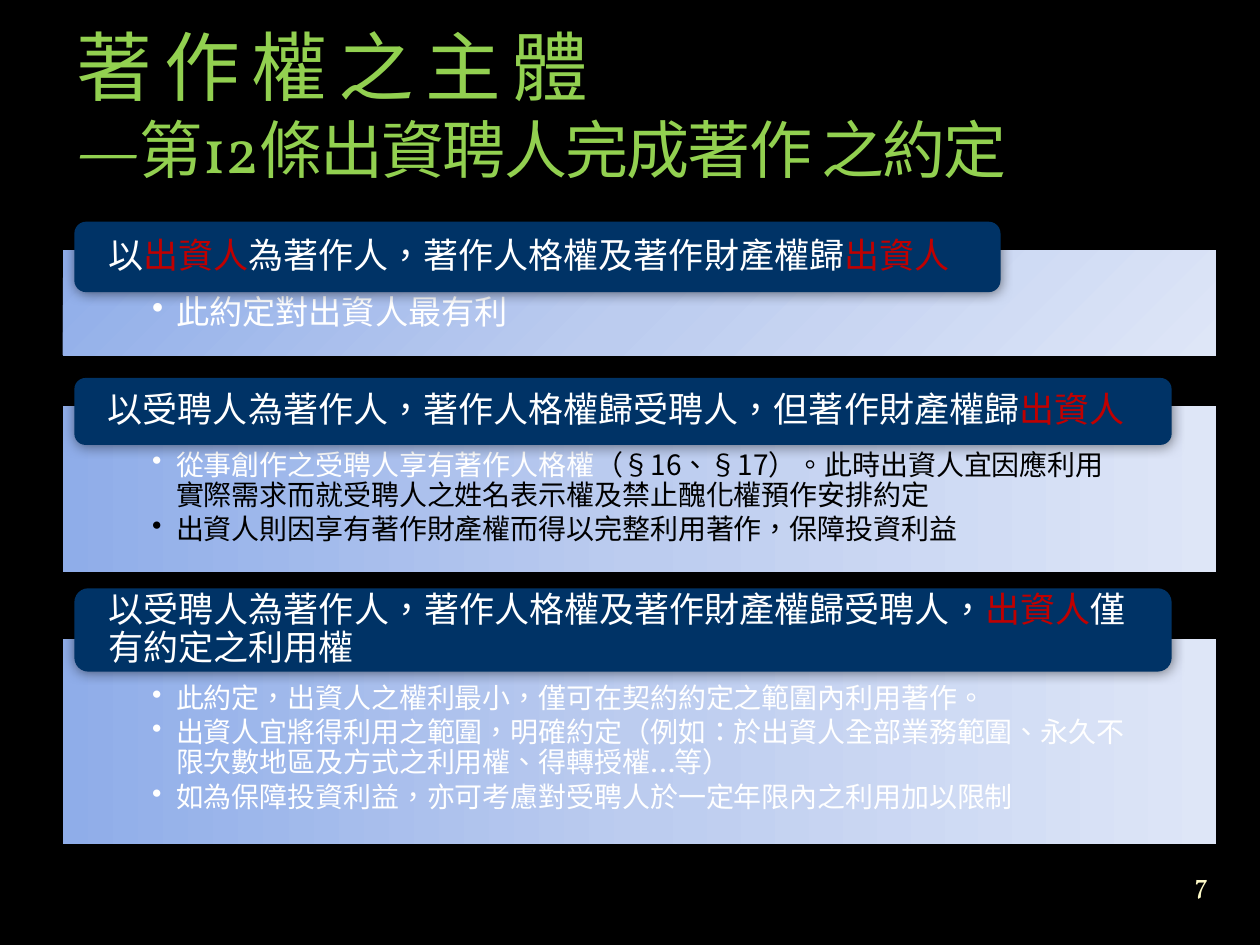
from copy import deepcopy

from lxml.etree import SubElement
from pptx import Presentation
from pptx.dml.color import RGBColor
from pptx.enum.shapes import MSO_SHAPE as Shape
from pptx.enum.text import MSO_ANCHOR as Anchor, MSO_AUTO_SIZE as AutoSize, PP_ALIGN as Align
from pptx.oxml.ns import qn
from pptx.util import Cm, Pt

# Content: a paragraph is a list of (text, colour) or (text, colour, font) runs
SERIF, SANS = "Vollkorn", "Noto Sans CJK SC"
WHITE, BLACK, RED = "FFFFFF", "000000", "C00000"
GREEN, NAVY, CREAM = "92D050", "003366", "FEFAC9"
GRADIENT = [(0, "8FADE9"), (0.5, "BCCCEF"), (1, "DEE6F7")]

TITLE_LINES = [("著 作 權 之 主 體", 43.2), ("—第12條出資聘人完成著作 之約定", 36)]

SECTIONS = [
    dict(
        heading=[("以", WHITE), ("出資人", RED),
                 ("為著作人，著作人格權及著作財產權歸", WHITE), ("出資人", RED)],
        bullets=[[("此約定對出資人最有利", WHITE)]],
        size=19, angle=315, panel=(5.05, 2.11), tab=(4.47, 18.67, 1.42),
    ),
    dict(
        heading=[("以受聘人為著作人，著作人格權歸受聘人，但著作財產權歸", WHITE), ("出資人", RED)],
        bullets=[
            [("從事創作之受聘人享有著作人格權", WHITE), ("（", BLACK),
             ("§16、§17）。此時出資人宜因應利用實際需求而就受聘人之姓名表示權及禁止醜化權預作安排約定",
              BLACK, SANS)],
            [("出資人則因享有著作財產權而得以完整利用著作，保障投資利益", BLACK, SANS)],
        ],
        size=16, angle=0, panel=(8.18, 3.35), tab=(7.62, 22.12, 1.35),
    ),
    dict(
        heading=[("以受聘人為著作人，著作人格權及著作財產權歸受聘人，", WHITE),
                 ("出資人", RED), ("僅有約定之利用權", WHITE)],
        bullets=[
            [("此約定，出資人之權利最小，僅可在契約約定之範圍內利用著作。", WHITE)],
            [("出資人宜將得利用之範圍，明確約定（例如：於出資人全部業務範圍、"
              "永久不限次數地區及方式之利用權、得轉授權…等）", WHITE)],
            [("如為保障投資利益，亦可考慮對受聘人於一定年限內之利用加以限制", WHITE)],
        ],
        size=16, angle=0, panel=(12.88, 4.14), tab=(11.86, 22.12, 1.68),
    ),
]
PANEL_LEFT, PANEL_WIDTH, TAB_LEFT = 1.27, 23.24, 1.5


def rgb(colour):
    return RGBColor.from_string(colour)


def add_run(paragraph, text, colour, font=SERIF, size=16, spacing=None):
    run = paragraph.add_run()
    run.text = text
    run.font.size = Pt(size)
    run.font.name = font
    run.font.bold = False
    run.font.color.rgb = rgb(colour)
    properties = run.font._element
    properties.set("lang", "zh-TW")
    if spacing is not None:
        properties.set("spc", str(spacing))
    SubElement(properties, qn("a:ea")).set("typeface", font)


def write(shape, paragraphs, size=16, insets=(0, 0, 0, 0), anchor=Anchor.MIDDLE,
          align=Align.LEFT, line_spacing=None, space_after=0, bullet=False):
    frame = shape.text_frame
    frame.word_wrap = True
    frame.auto_size = AutoSize.NONE
    frame.vertical_anchor = anchor
    (frame.margin_left, frame.margin_top,
     frame.margin_right, frame.margin_bottom) = map(Cm, insets)
    for index, runs in enumerate(paragraphs):
        paragraph = frame.add_paragraph() if index else frame.paragraphs[0]
        paragraph.alignment = align
        paragraph.line_spacing = line_spacing
        paragraph.space_after = Pt(space_after)
        if bullet:
            properties = paragraph._p.get_or_add_pPr()
            properties.set("marL", str(Cm(0.48)))
            properties.set("indent", str(Cm(-0.48)))
            SubElement(properties, qn("a:buChar")).set("char", "•")
        for run in runs:
            add_run(paragraph, *run, size=size)


def add_box(slide, kind, left, top, width, height):
    shape = slide.shapes.add_shape(kind, Cm(left), Cm(top), Cm(width), Cm(height))
    shape.shadow.inherit = False
    shape.line.fill.background()
    return shape


def fill_gradient(shape, angle):
    shape.fill.gradient()
    shape.fill.gradient_angle = angle
    first = shape.fill.gradient_stops[0]._gs
    first.addnext(deepcopy(first))
    for stop, (position, colour) in zip(shape.fill.gradient_stops, GRADIENT):
        stop.position = position
        stop.color.rgb = rgb(colour)


def add_glow_shadow(shape):
    effects = shape._element.spPr.find(qn("a:effectLst"))
    shadow = SubElement(effects, qn("a:outerShdw"), blurRad=str(Pt(7.5)), dist="0", dir="0")
    colour = SubElement(shadow, qn("a:srgbClr"), val=BLACK)
    SubElement(colour, qn("a:alpha"), val="50000")


def add_section(slide, section):
    # Panel with the bullets
    top, height = section["panel"]
    panel = add_box(slide, Shape.RECTANGLE, PANEL_LEFT, top, PANEL_WIDTH, height)
    fill_gradient(panel, section["angle"])
    write(panel, section["bullets"], size=section["size"], insets=(1.8, 0.91, 1.8, 0.3),
          anchor=Anchor.TOP, line_spacing=0.9, space_after=0.15 * section["size"], bullet=True)
    # Heading tab over its upper edge
    top, width, height = section["tab"]
    tab = add_box(slide, Shape.ROUNDED_RECTANGLE, TAB_LEFT, top, width, height)
    tab.fill.solid()
    tab.fill.fore_color.rgb = rgb(NAVY)
    add_glow_shadow(tab)
    write(tab, [section["heading"]], size=20, insets=(0.61, 0, 0.61, 0), line_spacing=0.9)


def main():
    presentation = Presentation()
    presentation.slide_width, presentation.slide_height = Cm(25.4), Cm(19.05)
    slide = presentation.slides.add_slide(presentation.slide_layouts[5])
    slide.background.fill.solid()
    slide.background.fill.fore_color.rgb = rgb(BLACK)

    # Title
    title = slide.shapes.title
    title.left, title.top, title.width, title.height = Cm(1.3), Cm(1.12), Cm(23.42), Cm(2.77)
    write(title, [[], []], insets=(0.25, 0.13, 0.25, 0.13), anchor=Anchor.BOTTOM)
    for paragraph, (text, size) in zip(title.text_frame.paragraphs, TITLE_LINES):
        add_run(paragraph, text, GREEN, size=size, spacing=-100)

    # Sections
    for section in SECTIONS:
        add_section(slide, section)

    # Page number
    number = slide.shapes.add_textbox(Cm(23.37), Cm(17.17), Cm(1.7), Cm(1.27))
    write(number, [[("7", CREAM)]], align=Align.CENTER)

    presentation.save("out.pptx")


if __name__ == "__main__":
    main()
